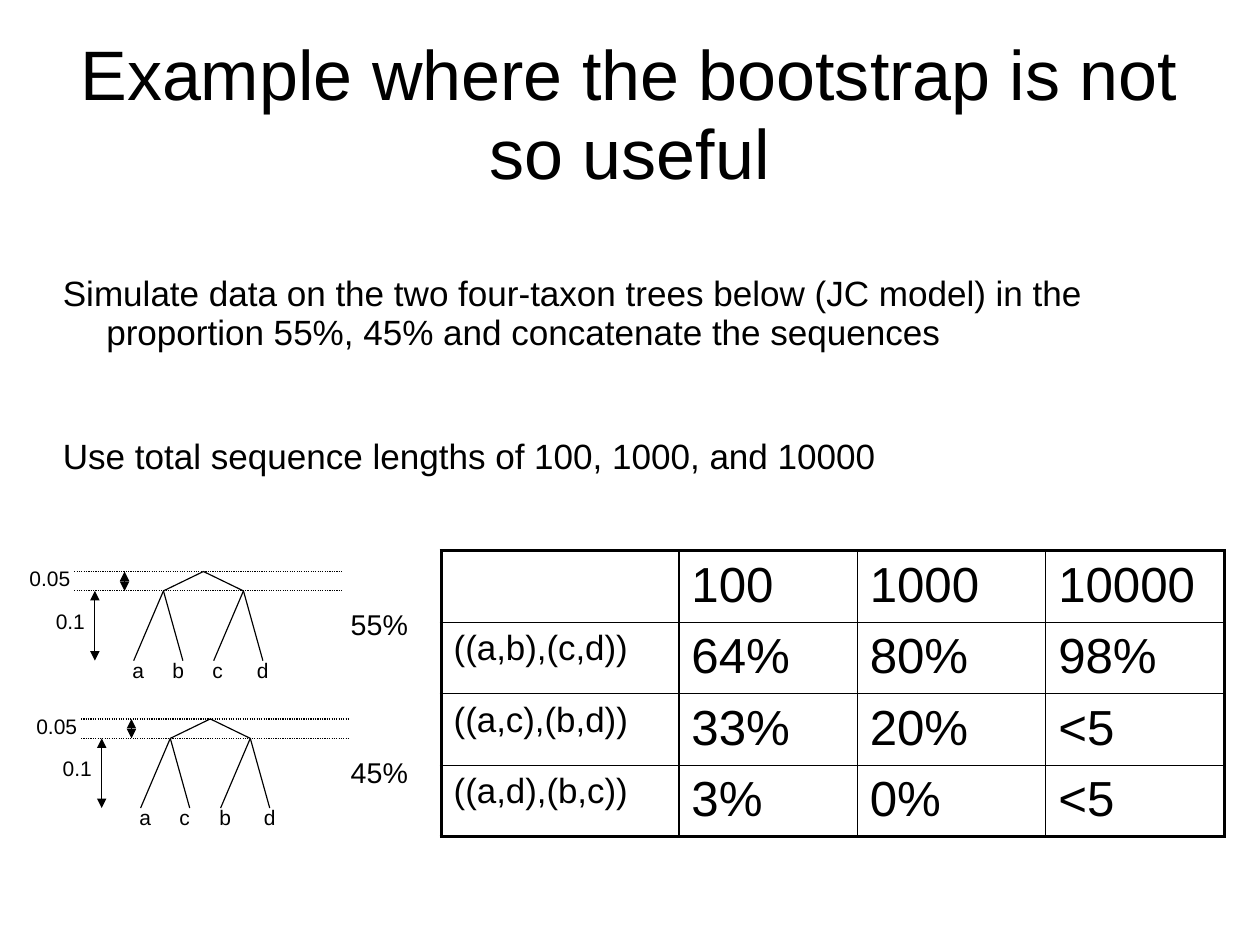
from dataclasses import dataclass

from pptx import Presentation
from pptx.dml.color import RGBColor
from pptx.enum.dml import MSO_LINE
from pptx.enum.shapes import MSO_CONNECTOR as Link
from pptx.enum.text import MSO_ANCHOR as Anchor, MSO_AUTO_SIZE as Fit, PP_ALIGN as Align
from pptx.oxml.ns import qn
from pptx.oxml.xmlchemy import OxmlElement as Node
from pptx.util import Inches, Pt


@dataclass(frozen=True)
class Theme:
    face: str = "Arial"
    ink: str = "000000"
    title: float = 44.1
    body: float = 22.1
    head: float = 31
    split: float = 22
    share: float = 18
    small: float = 13.2
    thin: float = 0.75
    rule: float = 1
    frame: float = 2.25
    lead: float = 0.93


theme = Theme()


def style(para, size):
    """Set the font of a whole paragraph."""
    para.font.name = theme.face
    para.font.size = Pt(size)
    para.font.color.rgb = RGBColor.from_string(theme.ink)


def join(shapes, start, end, dots=False, arrows=False):
    """Draw a thin straight line between two points given in inches."""
    link = shapes.add_connector(Link.STRAIGHT, *map(Inches, (*start, *end)))
    link.line.width = Pt(theme.thin)
    link.line.color.rgb = RGBColor.from_string(theme.ink)
    if dots:
        link.line.dash_style = MSO_LINE.ROUND_DOT
    props = link.element.spPr
    if arrows:
        for tag in ("a:headEnd", "a:tailEnd"):
            tip = Node(tag)
            tip.set("type", "triangle")
            props.find(qn("a:ln")).append(tip)
    props.append(Node("a:effectLst"))


# The page is 28 by 21 cm
deck = Presentation()
deck.slide_width, deck.slide_height = Inches(28 / 2.54), Inches(21 / 2.54)
slide = deck.slides.add_slide(deck.slide_layouts[1])

# Title and body
title, body = slide.placeholders
places = (
    (title, (0.55, 0.33, 9.92, 1.38), 0, Anchor.MIDDLE),
    (body, (0.55, 2.38, 10, 2.44), 0.03, Anchor.TOP),
)
for holder, box, top, anchor in places:
    holder.left, holder.top, holder.width, holder.height = map(Inches, box)
    frame = holder.text_frame
    frame.auto_size = Fit.NONE
    frame.word_wrap = True
    frame.vertical_anchor = anchor
    frame.margin_left = frame.margin_right = frame.margin_bottom = 0
    frame.margin_top = Inches(top)

title.text_frame.text = "Example where the bootstrap is not so useful"
para = title.text_frame.paragraphs[0]
para.alignment = Align.CENTER
para.line_spacing = theme.lead
style(para, theme.title)

body.text_frame.text = (
    "Simulate data on the two four-taxon trees below (JC model) "
    "in the proportion 55%, 45% and concatenate the sequences\n"
    "Use total sequence lengths of 100, 1000, and 10000"
)
for para, gap in zip(body.text_frame.paragraphs, (0, 39)):
    para.line_spacing = theme.lead
    para.space_before, para.space_after = Pt(gap), Pt(14.2)
    style(para, theme.body)
    props = para._p.get_or_add_pPr()
    props.set("marL", str(Inches(0.38)))
    props.set("indent", str(-Inches(0.38)))
    props.append(Node("a:buNone"))

# Table of bootstrap support
rows = (
    ("", "100", "1000", "10000"),
    ("((a,b),(c,d))", "64%", "80%", "98%"),
    ("((a,c),(b,d))", "33%", "20%", "<5"),
    ("((a,d),(b,c))", "3%", "0%", "<5"),
)
widths = (2.08, 1.56, 1.65, 1.56)
table = slide.shapes.add_table(
    len(rows), len(widths), Inches(3.86), Inches(4.82), Inches(sum(widths)), Inches(2.5)
).table
table.first_row = table.horz_banding = False
for column, width in zip(table.columns, widths):
    column.width = Inches(width)
for r, row in enumerate(rows):
    for c, text in enumerate(row):
        cell = table.cell(r, c)
        cell.margin_left = cell.margin_right = Inches(0.11)
        cell.margin_top = cell.margin_bottom = Inches(0.06)
        cell.text = text
        style(cell.text_frame.paragraphs[0], theme.head if c else theme.split)
        outer = {
            "a:lnL": c == 0,
            "a:lnR": c == len(widths) - 1,
            "a:lnT": r == 0,
            "a:lnB": r == len(rows) - 1,
        }
        props = cell._tc.get_or_add_tcPr()
        for tag, edge in outer.items():
            line = Node(tag)
            line.set("w", str(Pt(theme.frame if edge else theme.rule)))
            fill, ink = Node("a:solidFill"), Node("a:srgbClr")
            ink.set("val", theme.ink)
            fill.append(ink)
            line.append(fill)
            props.append(line)
        cell.fill.background()

# Two trees, each drawn from its root
for x, y, taxa, share in ((1.78, 5, "abcd", "55%"), (1.84, 6.29, "acbd", "45%")):
    shapes = slide.shapes.add_group_shape().shapes
    fork, tips = y + 0.17, y + 0.78
    for node in (x - 0.35, x + 0.35):
        join(shapes, (x, y), (node, fork))
        for shift in (-0.26, 0.17):
            join(shapes, (node, fork), (node + shift, tips))
    for level in (y, fork):
        join(shapes, (x - 1.13, level), (x + 1.22, level), dots=True)
    join(shapes, (x - 0.95, fork), (x - 0.95, tips), arrows=True)
    join(shapes, (x - 0.69, y), (x - 0.69, fork), arrows=True)

    labels = [
        (shapes, "0.1", x - 1.39, y + 0.29, 0.46, 0.31, theme.small),
        (shapes, "0.05", x - 1.62, y - 0.08, 0.56, 0.31, theme.small),
        (slide.shapes, share, 2.97, y + 0.29, 0.71, 0.38, theme.share),
    ]
    for taxon, shift in zip(taxa, (-0.72, -0.37, -0.02, 0.37)):
        labels.append((shapes, taxon, x + shift, y + 0.72, 0.31, 0.31, theme.small))
    for target, text, left, top, width, height, size in labels:
        frame = target.add_textbox(*map(Inches, (left, top, width, height))).text_frame
        frame.word_wrap = False
        frame.auto_size = Fit.SHAPE_TO_FIT_TEXT
        frame.text = text
        para = frame.paragraphs[0]
        para.line_spacing = theme.lead
        style(para, size)

deck.save("out.pptx")
